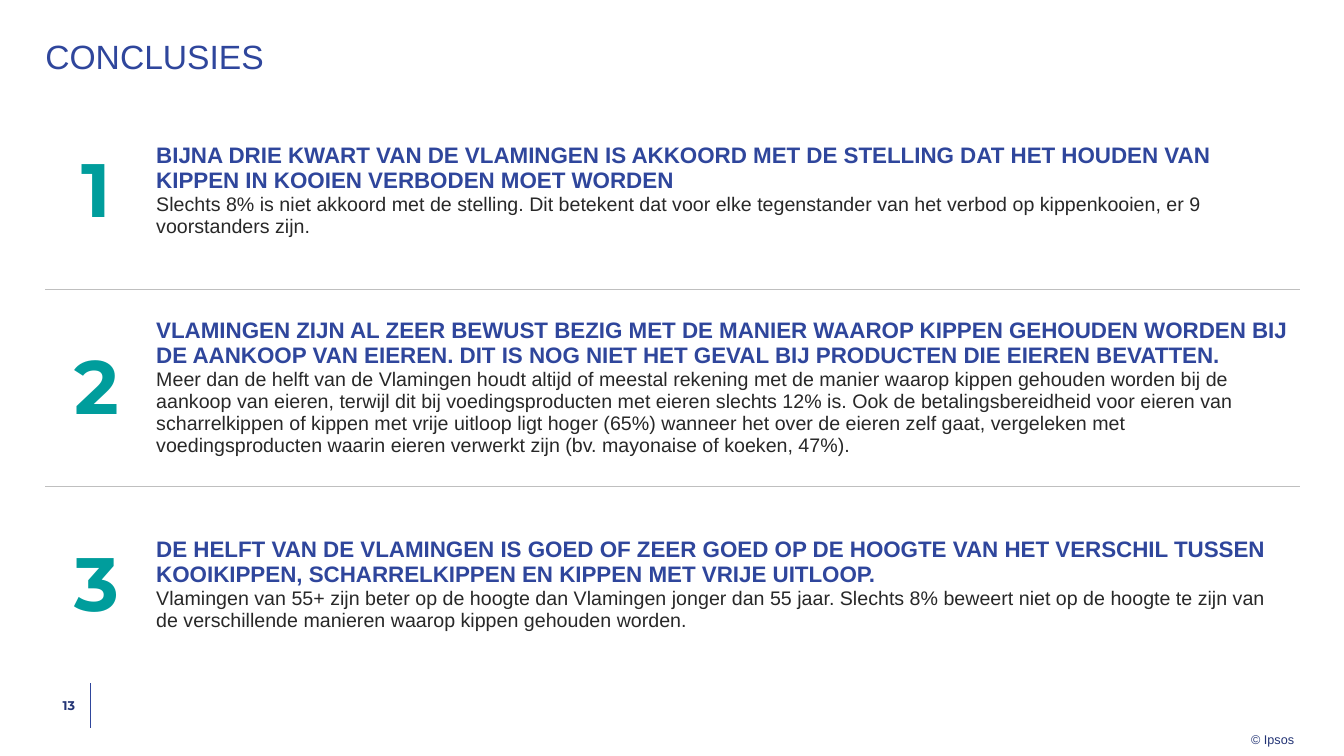
from lxml.etree import SubElement
from pptx import Presentation
from pptx.dml.color import RGBColor
from pptx.enum.shapes import MSO_CONNECTOR as Link
from pptx.enum.text import MSO_ANCHOR as Anchor, PP_ALIGN as Align
from pptx.oxml.ns import qn
from pptx.util import Inches, Pt

COLORS = {"blue": "2F469C", "navy": "233475", "teal": "009D9C",
          "dark": "282828", "grey": "BFBFBF"}

POINTS = [
    ("BIJNA DRIE KWART VAN DE VLAMINGEN IS AKKOORD MET DE STELLING DAT HET "
     "HOUDEN VAN KIPPEN IN KOOIEN VERBODEN MOET WORDEN",
     "Slechts 8% is niet akkoord met de stelling. Dit betekent dat voor elke "
     "tegenstander van het verbod op kippenkooien, er 9 voorstanders zijn."),
    ("VLAMINGEN ZIJN AL ZEER BEWUST BEZIG MET DE MANIER WAAROP KIPPEN GEHOUDEN "
     "WORDEN BIJ DE AANKOOP VAN EIEREN. DIT IS NOG NIET HET GEVAL BIJ PRODUCTEN "
     "DIE EIEREN BEVATTEN.",
     "Meer dan de helft van de Vlamingen houdt altijd of meestal rekening met de "
     "manier waarop kippen gehouden worden bij de aankoop van eieren, terwijl dit "
     "bij voedingsproducten met eieren slechts 12% is. Ook de betalingsbereidheid "
     "voor eieren van scharrelkippen of kippen met vrije uitloop ligt hoger (65%) "
     "wanneer het over de eieren zelf gaat, vergeleken met voedingsproducten waarin "
     "eieren verwerkt zijn (bv. mayonaise of koeken, 47%)."),
    ("DE HELFT VAN DE VLAMINGEN IS GOED OF ZEER GOED OP DE HOOGTE VAN HET VERSCHIL "
     "TUSSEN KOOIKIPPEN, SCHARRELKIPPEN EN KIPPEN MET VRIJE UITLOOP.",
     "Vlamingen van 55+ zijn beter op de hoogte dan Vlamingen jonger dan 55 jaar. "
     "Slechts 8% beweert niet op de hoogte te zijn van de verschillende manieren "
     "waarop kippen gehouden worden."),
]


def add_run(para, text, size, color, bold=False, face="Arial"):
    run = para.add_run()
    run.text = text
    font = run.font
    font.name, font.size, font.bold = face, Pt(size), bold
    font.color.rgb = RGBColor.from_string(COLORS[color])


def set_insets(item, left, top, right, bottom):
    """Set the margins, in inches, of a text frame or a table cell."""
    item.margin_left, item.margin_top = Inches(left), Inches(top)
    item.margin_right, item.margin_bottom = Inches(right), Inches(bottom)


def add_box(slide, left, top, width, height, insets=(0, 0, 0, 0), wrap=True):
    """Add an empty text box and return its frame."""
    box = slide.shapes.add_textbox(Inches(left), Inches(top),
                                   Inches(width), Inches(height))
    frame = box.text_frame
    frame.word_wrap = wrap
    set_insets(frame, *insets)
    return frame


def set_edges(cell, shown):
    """Draw the cell edges named in shown and clear the others."""
    props = cell._tc.get_or_add_tcPr()
    for at, edge in enumerate(("lnL", "lnR", "lnT", "lnB")):
        line = props.makeelement(qn("a:" + edge), {"w": str(Pt(0.5))})
        if edge in shown:
            fill = SubElement(line, qn("a:solidFill"))
            SubElement(fill, qn("a:srgbClr"), val=COLORS["grey"])
        else:
            SubElement(line, qn("a:noFill"))
        props.insert(at, line)


def add_points(slide):
    rows = len(POINTS)
    table = slide.shapes.add_table(rows, 2, Inches(0.45), Inches(0.91),
                                   Inches(12.44), Inches(5.87)).table
    table.first_row = table.horz_banding = False
    table.columns[0].width = Inches(1.02)
    table.columns[1].width = Inches(11.42)
    for i, (head, body) in enumerate(POINTS):
        edges = [edge for edge, on in (("lnT", i > 0), ("lnB", i < rows - 1)) if on]
        left, right = table.cell(i, 0), table.cell(i, 1)
        for cell in (left, right):
            cell.fill.background()
            cell.vertical_anchor = Anchor.MIDDLE
            set_edges(cell, edges)
        set_insets(left, 0, 0, 0, 0)
        set_insets(right, 0.08, 0.04, 0.08, 0.04)
        para = left.text_frame.paragraphs[0]
        para.alignment = Align.CENTER
        add_run(para, str(i + 1), 54, "teal", True, "Montserrat")
        frame = right.text_frame
        add_run(frame.paragraphs[0], head, 16, "blue", True)
        add_run(frame.add_paragraph(), body, 14, "dark")


def add_footer(slide):
    rule = slide.shapes.add_connector(Link.STRAIGHT, Inches(0.9), Inches(6.78),
                                      Inches(0.9), Inches(7.22))
    rule.line.color.rgb = RGBColor.from_string(COLORS["blue"])
    rule.line.width = Pt(0.5)
    SubElement(rule._element.spPr, qn("a:effectLst"))

    frame = add_box(slide, 12.41, 7.22, 0.43, 0.19, (0, 0.04, 0, 0), False)
    add_run(frame.paragraphs[0], "© Ipsos", 9, "navy")

    frame = add_box(slide, 0.45, 6.78, 0.45, 0.43, (0, 0, 0.12, 0))
    frame.vertical_anchor = Anchor.MIDDLE
    para = frame.paragraphs[0]
    para.alignment = Align.RIGHT
    add_run(para, "13 ", 9, "navy", True, "Montserrat")


def main():
    deck = Presentation()
    deck.slide_width, deck.slide_height = Inches(13.33), Inches(7.5)
    slide = deck.slides.add_slide(deck.slide_layouts[6])
    title = add_box(slide, 0.45, 0.4, 12.44, 0.36).paragraphs[0]
    title.line_spacing = 0.9
    add_run(title, "CONCLUSIES", 24, "blue")
    add_points(slide)
    add_footer(slide)
    deck.save("out.pptx")


if __name__ == "__main__":
    main()
